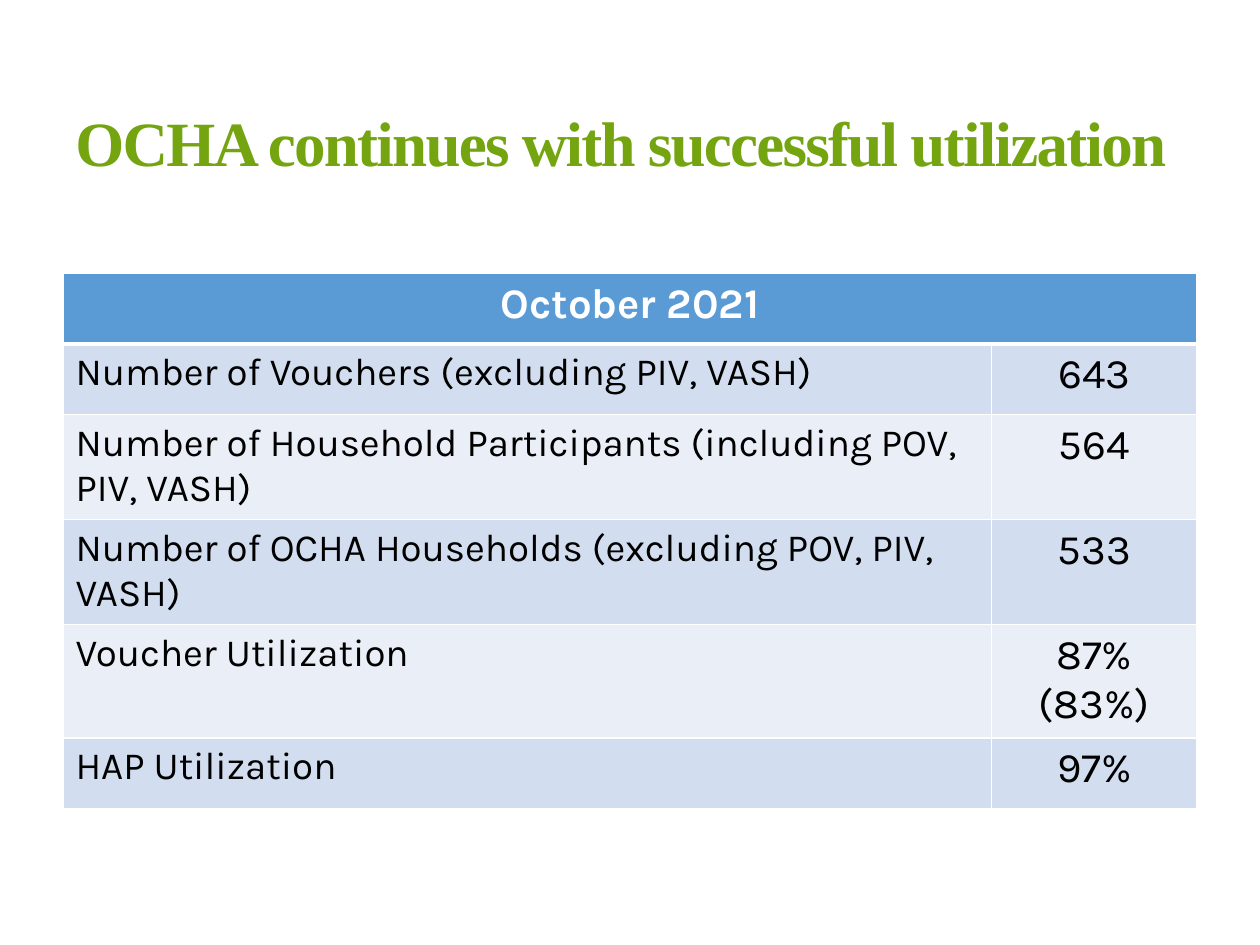
from lxml import etree
from pptx import Presentation
from pptx.dml.color import RGBColor
from pptx.enum.text import MSO_ANCHOR, PP_ALIGN
from pptx.oxml.ns import qn
from pptx.util import Inches, Pt

COLORS = {
    "title": "74A510",
    "header": "5B9BD5",
    "band_dark": "D2DEEF",
    "band_light": "EAEFF7",
    "white": "FFFFFF",
    "text": "000000",
}
TITLE_FORMAT = {"name": "Times New Roman", "size": Pt(36), "bold": True}
HEADER_FORMAT = {"name": "Karla", "size": Pt(24), "bold": True}
LABEL_FORMAT = {"name": "Karla", "size": Pt(22), "bold": False}
VALUE_FORMAT = {"name": "Karla", "size": Pt(24), "bold": False}

PERIOD = "October 2021"
MEASURES = [
    ("Number of Vouchers (excluding PIV, VASH)", "643"),
    ("Number of Household Participants (including POV, PIV, VASH)", "564"),
    ("Number of OCHA Households (excluding POV, PIV, VASH)", "533"),
    ("Voucher Utilization", "87% (83%)"),
    ("HAP Utilization", "97%"),
]
COLUMN_WIDTHS = [7.37, 1.63]
ROW_HEIGHTS = [0.56, 0.56, 0.58, 0.56, 0.5, 0.56]


def rgb(name):
    return RGBColor.from_string(COLORS[name])


def write(tf, text, fmt, color, align=PP_ALIGN.LEFT):
    p = tf.paragraphs[0]
    p.alignment = align
    r = p.add_run()
    r.text = text
    for key, value in fmt.items():
        setattr(r.font, key, value)
    r.font.color.rgb = rgb(color)
    return r


def set_borders(cell, top=1, bottom=1):
    """Draw white cell borders, with widths in points."""
    tc_pr = cell._tc.get_or_add_tcPr()
    for tag, width in (("lnL", 1), ("lnR", 1), ("lnT", top), ("lnB", bottom)):
        ln = etree.SubElement(tc_pr, qn(f"a:{tag}"), w=str(Pt(width)))
        fill = etree.SubElement(ln, qn("a:solidFill"))
        etree.SubElement(fill, qn("a:srgbClr"), val=COLORS["white"])


def fill_cell(cell, color):
    cell.fill.solid()
    cell.fill.fore_color.rgb = rgb(color)


def add_title(s, text, left, top, width, height):
    tf = s.shapes.add_textbox(left, top, width, height).text_frame
    tf.word_wrap = True
    tf.vertical_anchor = MSO_ANCHOR.MIDDLE
    r = write(tf, text, TITLE_FORMAT, "title")
    r.font._element.set("spc", "-100")


def add_utilization_table(s, left, top, width, height):
    table = s.shapes.add_table(
        len(ROW_HEIGHTS), len(COLUMN_WIDTHS), left, top, width, height
    ).table
    for column, inches in zip(table.columns, COLUMN_WIDTHS):
        column.width = Inches(inches)
    for row, inches in zip(table.rows, ROW_HEIGHTS):
        row.height = Inches(inches)

    header = table.cell(0, 0)
    header.merge(table.cell(0, 1))
    for col in range(len(COLUMN_WIDTHS)):
        set_borders(table.cell(0, col), bottom=3)
        fill_cell(table.cell(0, col), "header")
    write(header.text_frame, PERIOD, HEADER_FORMAT, "white", PP_ALIGN.CENTER)

    columns = [(LABEL_FORMAT, PP_ALIGN.LEFT), (VALUE_FORMAT, PP_ALIGN.CENTER)]
    for row, measure in enumerate(MEASURES, start=1):
        for col, (text, (fmt, align)) in enumerate(zip(measure, columns)):
            cell = table.cell(row, col)
            set_borders(cell, top=3 if row == 1 else 1)
            fill_cell(cell, "band_dark" if row % 2 else "band_light")
            write(cell.text_frame, text, fmt, "text", align)


def main():
    prs = Presentation()
    prs.slide_width, prs.slide_height = Inches(10), Inches(7.5)
    s = prs.slides.add_slide(prs.slide_layouts[6])
    add_title(s, "OCHA continues with successful utilization",
              Inches(0.5), Inches(0.58), Inches(9), Inches(1.08))
    add_utilization_table(s, Inches(0.5), Inches(2.17), Inches(9), Inches(3.32))
    prs.save("out.pptx")


if __name__ == "__main__":
    main()
